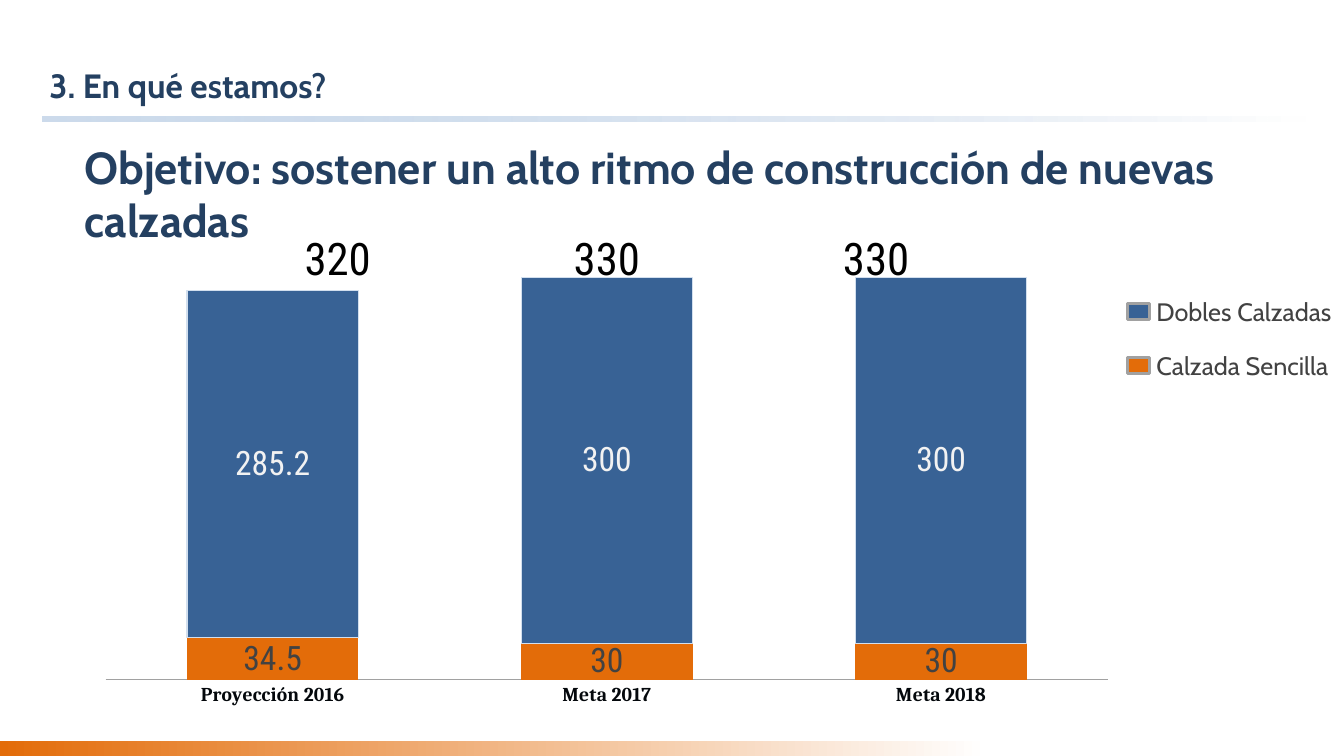
"""Builds the road construction target slide with a stacked column chart."""
from lxml.etree import SubElement
from pptx import Presentation
from pptx.chart.data import CategoryChartData
from pptx.dml.color import RGBColor
from pptx.enum.chart import XL_CHART_TYPE as CT, XL_LABEL_POSITION as LP, XL_TICK_MARK as TM
from pptx.enum.shapes import MSO_SHAPE as SH
from pptx.enum.text import MSO_ANCHOR as VA, PP_ALIGN as AL
from pptx.oxml.ns import qn
from pptx.util import Inches, Pt

NAVY = RGBColor(0x24, 0x40, 0x61)
BLUE = RGBColor(0x38, 0x62, 0x95)
PALE = RGBColor(0x9A, 0xB7, 0xD9)
EDGE = RGBColor(0xD2, 0xDF, 0xEE)
ORANGE = RGBColor(0xE3, 0x6C, 0x09)
DARK = RGBColor(0x42, 0x42, 0x42)
GREY = RGBColor(0xA1, 0xA1, 0xA1)
LIGHT = RGBColor(0xF2, 0xF2, 0xF2)
INK = RGBColor(0x04, 0x08, 0x0C)
BLACK = RGBColor(0, 0, 0)
WHITE = RGBColor(255, 255, 255)

HEADINGS = [
    ("3. En qué estamos?", (0.49, 0.22, 9.4, 0.82), 24),
    ("Objetivo: sostener un alto ritmo de construcción de nuevas calzadas",
     (0.84, 1.63, 12.49, 0.82), 32),
]
BANDS = [((0.42, 1.16, 12.53, 0.05), PALE, 50), ((0, 7.35, 9.8, 0.15), ORANGE, 100)]
YEARS = ["Proyección 2016", "Meta 2017", "Meta 2018"]
SERIES = [
    ("Calzada Sencilla", (34.5, 30, 30), ORANGE, DARK),
    ("Dobles Calzadas", (285.2, 300, 300), BLUE, LIGHT),
]
TOTALS = ["320", "330", "330"]
CHART_BOX = (0.84, 2.42, 10.36, 4.7)
PLOT_LAYOUT = {"x": 0.02, "y": 0.02, "w": 0.96, "h": 0.9}
AXIS_MAX = 350


def set_font(font, **values):
    for name, value in values.items():
        if name == "color":
            font.color.rgb = value
        else:
            setattr(font, name, value)


def add_text(s, text, box, size, face, color, bold=False, margin=0.0,
             anchor=VA.TOP, align=AL.LEFT, space=0):
    tf = s.shapes.add_textbox(*map(Inches, box)).text_frame
    frame = {"word_wrap": True, "vertical_anchor": anchor}
    for side in ("left", "right", "top", "bottom"):
        frame["margin_" + side] = Inches(margin)
    for name, value in frame.items():
        setattr(tf, name, value)
    p = tf.paragraphs[0]
    p.alignment, p.space_after = align, Pt(space)
    r = p.add_run()
    r.text = text
    set_font(r.font, size=Pt(size), name=face, color=color, bold=bold)


def add_rect(s, box):
    sp = s.shapes.add_shape(SH.RECTANGLE, *map(Inches, box))
    sp.shadow.inherit = False
    return sp


def add_band(s, box, color, opacity):
    sp = add_rect(s, box)
    sp.line.fill.background()
    sp.fill.gradient()
    sp.fill.gradient_angle = 0
    for stop, rgb in zip(sp.fill.gradient_stops, (color, WHITE)):
        stop.color.rgb = rgb
    first = next(sp._element.iter(qn("a:srgbClr")))
    SubElement(first, qn("a:alpha"), val=str(opacity * 1000))


def add_columns(s):
    data = CategoryChartData()
    data.categories = YEARS
    for name, values, _, _ in SERIES:
        data.add_series(name, values)
    chart = s.shapes.add_chart(CT.COLUMN_STACKED, *map(Inches, CHART_BOX), data).chart
    chart.has_legend = chart.has_title = False
    set_font(chart.font, size=Pt(10), name="Calibri", color=BLUE)

    plot = chart.plots[0]
    plot.gap_width, plot.overlap, plot.vary_by_categories = 95, 100, False
    for series, (_, _, fill, ink) in zip(plot.series, SERIES):
        series.format.fill.solid()
        series.format.fill.fore_color.rgb = fill
        labels = series.data_labels
        labels.show_value, labels.position = True, LP.CENTER
        set_font(labels.font, size=Pt(24), name="Roboto Condensed", color=ink)
    edge = plot.series[1].format.line
    edge.color.rgb, edge.width = EDGE, Pt(0.75)

    value = chart.value_axis
    value.minimum_scale, value.maximum_scale = 0, AXIS_MAX
    value.has_major_gridlines = value.visible = False
    axis = chart.category_axis
    axis.major_tick_mark = axis.minor_tick_mark = TM.NONE
    axis.format.line.color.rgb, axis.format.line.width = GREY, Pt(0.75)
    set_font(axis.tick_labels.font, size=Pt(14), name="Cambria", color=INK, bold=True)

    area = next(chart._chartSpace.iter(qn("c:plotArea")))
    layout = area.find(qn("c:layout"))
    if layout is None:
        layout = SubElement(area, qn("c:layout"))
        area.insert(0, layout)
    manual = SubElement(layout, qn("c:manualLayout"))
    SubElement(manual, qn("c:layoutTarget"), val="inner")
    for key in ("x", "y"):
        SubElement(manual, qn(f"c:{key}Mode"), val="edge")
    for key, share in PLOT_LAYOUT.items():
        SubElement(manual, qn(f"c:{key}"), val=str(share))


def main():
    prs = Presentation()
    prs.slide_width, prs.slide_height = Inches(13.33), Inches(7.5)
    s = prs.slides.add_slide(prs.slide_layouts[6])
    for band in BANDS:
        add_band(s, *band)
    for text, box, size in HEADINGS:
        add_text(s, text, box, size, "Cabin", NAVY, bold=True, anchor=VA.BOTTOM)
    add_columns(s)
    for i, total in enumerate(TOTALS):
        add_text(s, total, (2.83 + 2.67 * i, 2.24, 1.04, 0.64), 32, "Roboto Condensed",
                 BLACK, margin=0.05, align=AL.CENTER)
    for i, (name, _, fill, _) in enumerate(reversed(SERIES)):
        top = 2.94 + 0.54 * i
        key = add_rect(s, (11.18, top + 0.07, 0.22, 0.16))
        key.fill.solid()
        key.fill.fore_color.rgb = fill
        key.line.color.rgb, key.line.width = GREY, Pt(2)
        add_text(s, name, (11.47, top, 1.86, 0.3), 18, "Cabin", DARK, space=6)
    prs.save("out.pptx")


if __name__ == "__main__":
    main()
